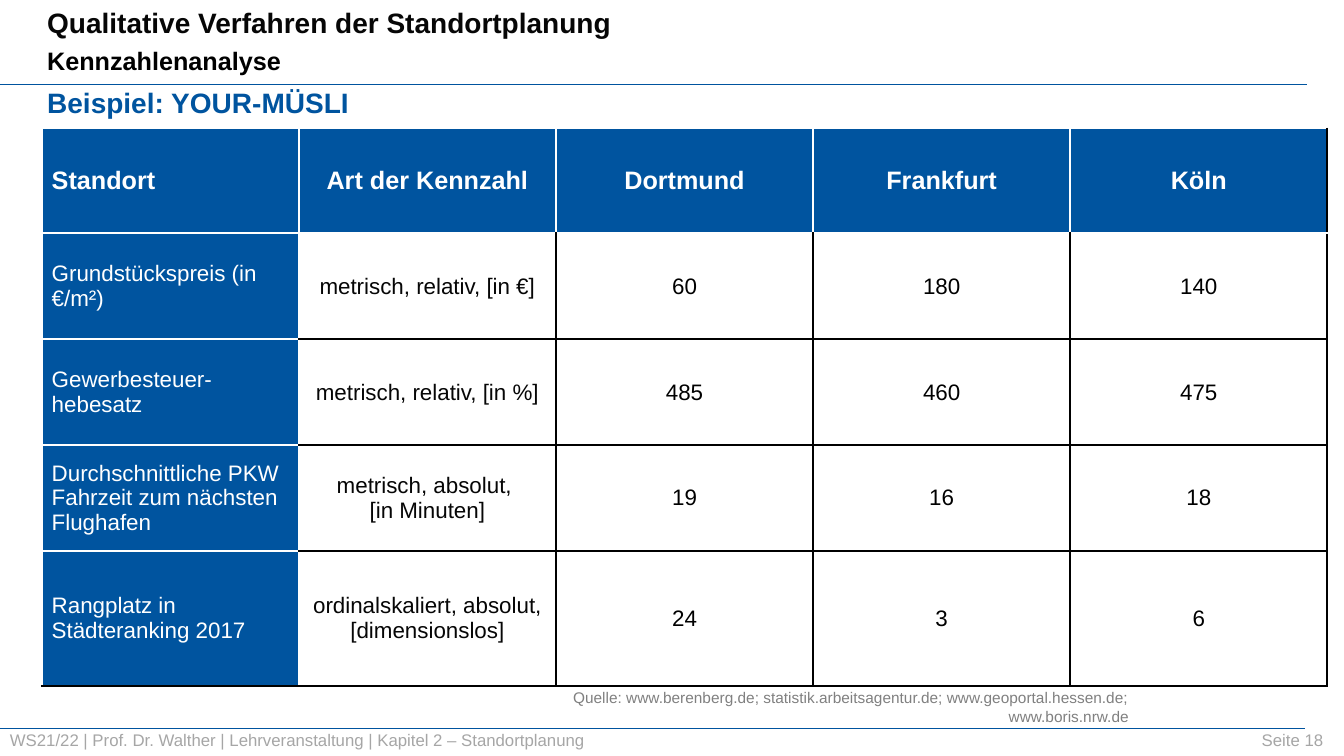
from lxml.etree import SubElement
from pptx import Presentation
from pptx.dml.color import RGBColor
from pptx.enum.shapes import MSO_CONNECTOR
from pptx.enum.text import MSO_ANCHOR as Anchor, PP_ALIGN as Align
from pptx.oxml import parse_xml
from pptx.oxml.ns import nsdecls, qn
from pptx.util import Cm, Pt

BLUE = RGBColor(0x00, 0x54, 0x9F)
WHITE = RGBColor(0xFF, 0xFF, 0xFF)
BLACK = RGBColor(0x00, 0x00, 0x00)
INK = RGBColor(0x06, 0x06, 0x06)
GREY = RGBColor(0x80, 0x80, 0x80)
LIGHT_GREY = RGBColor(0xA6, 0xA6, 0xA6)


def add_span(para, text, size, color, bold=False):
    span = para.add_run()
    span.text = text
    span.font.name = "Arial"
    span.font.size = Pt(size)
    span.font.bold = bold
    span.font.color.rgb = color


def add_box(left, top, width, height, insets=(0.25, 0.13), wrap=True, anchor=Anchor.TOP):
    frame = page.shapes.add_textbox(Cm(left), Cm(top), Cm(width), Cm(height)).text_frame
    frame.word_wrap = wrap
    frame.vertical_anchor = anchor
    frame.margin_left = frame.margin_right = Cm(insets[0])
    frame.margin_top = frame.margin_bottom = Cm(insets[1])
    return frame


deck = Presentation()
deck.slide_width, deck.slide_height = Cm(33.87), Cm(19.05)
page = deck.slides.add_slide(deck.slide_layouts[6])

# Rules below the title and above the footer
for left, top in ((0, 2.13), (-0.05, 18.36)):
    rule = page.shapes.add_connector(
        MSO_CONNECTOR.STRAIGHT, Cm(left), Cm(top), Cm(left + 32.94), Cm(top))
    rule.line.color.rgb = BLUE
    rule.line.width = Pt(1)
    SubElement(rule._element.spPr, qn("a:effectLst"))

# Footer
footer = add_box(0, 18.26, 26, 0.76, anchor=Anchor.MIDDLE)
add_span(footer.paragraphs[0],
         "WS21/22 | Prof. Dr. Walther | Lehrveranstaltung | Kapitel 2 – Standortplanung",
         12, LIGHT_GREY)
page_number = add_box(29.34, 18.39, 4.01, 0.51, insets=(0, 0), anchor=Anchor.MIDDLE)
page_number.paragraphs[0].alignment = Align.RIGHT
add_span(page_number.paragraphs[0], "Seite 18", 12, LIGHT_GREY)

# Table of location figures
rows = [
    ("Standort", "Art der Kennzahl", "Dortmund", "Frankfurt", "Köln"),
    ("Grundstückspreis (in €/m²)", "metrisch, relativ, [in €]", "60", "180", "140"),
    ("Gewerbesteuer-hebesatz", "metrisch, relativ, [in %]", "485", "460", "475"),
    ("Durchschnittliche PKW Fahrzeit zum nächsten Flughafen",
     "metrisch, absolut, \n[in Minuten]", "19", "16", "18"),
    ("Rangplatz in Städteranking 2017",
     "ordinalskaliert, absolut, [dimensionslos]", "24", "3", "6"),
]
heights = (2.64, 2.67, 2.67, 2.67, 3.4)
last_row, last_col = len(rows) - 1, len(rows[0]) - 1
table = page.shapes.add_table(
    len(rows), len(rows[0]), Cm(1.05), Cm(3.24), Cm(32.4), Cm(sum(heights))).table
table.first_row = table.horz_banding = False
for column in table.columns:
    column.width = Cm(6.48)

for r, texts in enumerate(rows):
    table.rows[r].height = Cm(heights[r])
    for c, text in enumerate(texts):
        cell = table.cell(r, c)
        header, label = r == 0, c == 0
        cell.vertical_anchor = Anchor.MIDDLE
        if header or label:
            cell.fill.solid()
            cell.fill.fore_color.rgb = BLUE
        else:
            cell.fill.background()
        for i, line in enumerate(text.split("\n")):
            para = cell.text_frame.paragraphs[0] if i == 0 else cell.text_frame.add_paragraph()
            para.alignment = Align.LEFT if label else Align.CENTER
            color = WHITE if header or label else INK if c == 1 else BLACK
            add_span(para, line, 18 if header else 16, color, header)

        # Borders are white next to a blue cell, black elsewhere and on the outer edge
        white_edges = {
            "lnL": header or c <= 1,
            "lnR": (header or label) and c < last_col,
            "lnT": r <= 1 or label,
            "lnB": (header or label) and r < last_row,
        }
        for i, (edge, white) in enumerate(white_edges.items()):
            cell._tc.get_or_add_tcPr().insert(i, parse_xml(
                f'<a:{edge} {nsdecls("a")} w="{Pt(1.5)}"><a:solidFill>'
                f'<a:srgbClr val="{WHITE if white else BLACK}"/></a:solidFill></a:{edge}>'))

# Example heading
example = add_box(0.94, 2.03, 8.18, 1.12, wrap=False)
add_span(example.paragraphs[0], "Beispiel: YOUR-MÜSLI", 20, BLUE, True)

# Source line
source = add_box(11.43, 17.25, 17.12, 0.79, insets=(0.1, 0.1), wrap=False)
source.paragraphs[0].alignment = Align.RIGHT
add_span(source.paragraphs[0],
         "Quelle: www.berenberg.de; statistik.arbeitsagentur.de; "
         "www.geoportal.hessen.de; www.boris.nrw.de", 11, GREY)

# Title and subtitle
title = add_box(0.94, 0, 22.68, 2.03)
add_span(title.paragraphs[0], "Qualitative Verfahren der Standortplanung", 20, INK, True)
subtitle = title.add_paragraph()
subtitle.space_before = Pt(5)
add_span(subtitle, "Kennzahlenanalyse", 18, BLACK, True)

deck.save("out.pptx")
